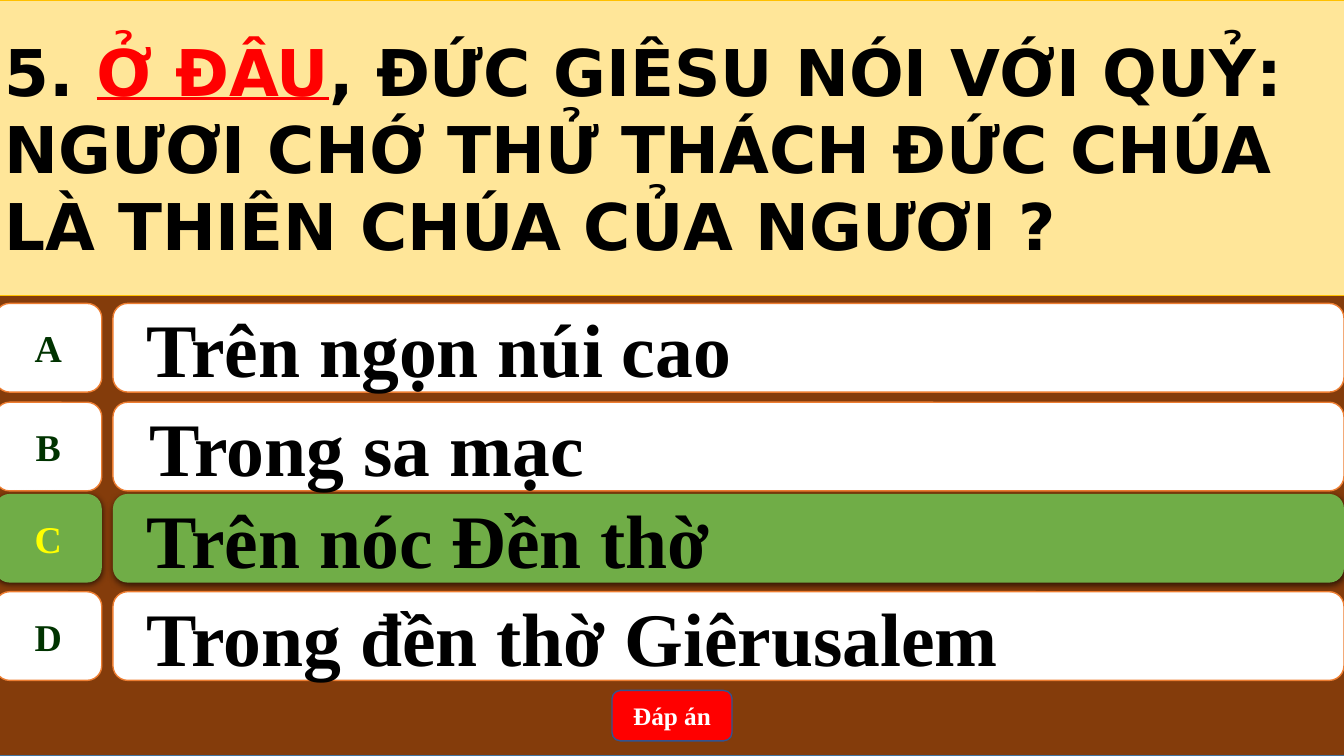
from lxml.etree import SubElement
from pptx import Presentation
from pptx.dml.color import RGBColor
from pptx.enum.shapes import MSO_SHAPE
from pptx.enum.text import MSO_ANCHOR, PP_ALIGN
from pptx.oxml.ns import qn
from pptx.util import Inches, Pt

BROWN = RGBColor(0x84, 0x3C, 0x0B)
BLUE = RGBColor(0x43, 0x73, 0x9E)
BUTTON_BLUE = RGBColor(0x32, 0x54, 0x91)
CREAM = RGBColor(0xFF, 0xE6, 0x99)
GOLD = RGBColor(0xFF, 0xC0, 0x00)
ORANGE = RGBColor(0xED, 0x7D, 0x31)
GREEN = RGBColor(0x70, 0xAD, 0x47)
DARK_GREEN = RGBColor(0x00, 0x33, 0x00)
YELLOW = RGBColor(0xFF, 0xFF, 0x00)
RED = RGBColor(0xFF, 0x00, 0x00)
WHITE = RGBColor(0xFF, 0xFF, 0xFF)
BLACK = RGBColor(0x00, 0x00, 0x00)

SERIF = "Times New Roman"
SANS = "DejaVu Sans"
LEFT = -0.05
FULL_WIDTH = 13.39
ANSWERS = [
    ("A", "Trên ngọn núi cao", 3.01, 0.29),
    ("B", "Trong sa mạc", 3.99, 0.32),
    ("C", "Trên nóc Đền thờ", 4.9, 0.29),
    ("D", "Trong đền thờ Giêrusalem", 5.87, 0.29),
]
CORRECT = "C"
QUESTION = [
    [("5. ", BLACK, False), ("Ở ĐÂU", RED, True),
     (", ĐỨC GIÊSU NÓI VỚI QUỶ:", BLACK, False)],
    [("NGƯƠI CHỚ THỬ THÁCH ĐỨC CHÚA", BLACK, False)],
    [("LÀ THIÊN CHÚA CỦA NGƯƠI ?", BLACK, False)],
]


def add_box(page, kind, place, fill, line=None, line_width=1):
    """Add a filled shape with an optional outline and no shadow."""
    box = page.shapes.add_shape(kind, *(Inches(length) for length in place))
    box.shadow.inherit = False
    box.fill.solid()
    box.fill.fore_color.rgb = fill
    if line is None:
        box.line.fill.background()
    else:
        box.line.color.rgb = line
        box.line.width = Pt(line_width)
    box.text_frame.vertical_anchor = MSO_ANCHOR.MIDDLE
    return box


def style_paragraph(para, align, font_name, size, color):
    """Set the alignment and the bold font of a paragraph."""
    para.alignment = align
    para.font.name = font_name
    para.font.size = Pt(size)
    para.font.bold = True
    para.font.color.rgb = color


def write_label(box, text, align, size, color):
    """Write one line of serif text into a shape."""
    para = box.text_frame.paragraphs[0]
    para.text = text
    style_paragraph(para, align, SERIF, size, color)


def add_shadow(box):
    """Give a shape a soft shadow below it."""
    effects = box._element.spPr.find(qn("a:effectLst"))
    shadow = SubElement(effects, qn("a:outerShdw"), blurRad=str(Pt(4.5)),
                        dist=str(Pt(1.5)), dir="5400000", rotWithShape="0")
    color = SubElement(shadow, qn("a:srgbClr"), val=str(BLACK))
    SubElement(color, qn("a:alpha"), val="63000")


def add_answer(page, letter, text, top, inset):
    """Add a letter tag and its answer bar, highlighted when correct."""
    correct = letter == CORRECT
    fill, line = (GREEN, None) if correct else (WHITE, ORANGE)
    bar = add_box(page, MSO_SHAPE.ROUNDED_RECTANGLE, (1.12, top, 12.21, 0.88), fill, line)
    bar.text_frame.margin_left = Inches(inset)
    bar.text_frame.word_wrap = True
    write_label(bar, text, PP_ALIGN.LEFT, 54, BLACK)
    tag = add_box(page, MSO_SHAPE.FLOWCHART_ALTERNATE_PROCESS,
                  (LEFT, top, 1.06, 0.88), fill, line)
    tag.text_frame.word_wrap = False
    write_label(tag, letter, PP_ALIGN.CENTER, 27, YELLOW if correct else DARK_GREEN)
    if correct:
        add_shadow(bar)
        add_shadow(tag)


def add_question(page):
    """Add the question panel with its highlighted words."""
    panel = add_box(page, MSO_SHAPE.RECTANGLE, (LEFT, 0, FULL_WIDTH, 2.93), CREAM, GOLD, 0.5)
    frame = panel.text_frame
    frame.word_wrap = True
    for index, pieces in enumerate(QUESTION):
        para = frame.add_paragraph() if index else frame.paragraphs[0]
        style_paragraph(para, PP_ALIGN.JUSTIFY, SANS, 46, BLACK)
        for text, color, underline in pieces:
            span = para.add_run()
            span.text = text
            span.font.color.rgb = color
            span.font.underline = underline


def main():
    """Build the quiz slide and save it."""
    deck = Presentation()
    deck.slide_width = Inches(13.33)
    deck.slide_height = Inches(7.5)
    page = deck.slides.add_slide(deck.slide_layouts[6])
    add_box(page, MSO_SHAPE.RECTANGLE, (LEFT, 0, FULL_WIDTH, 7.5), BROWN, BLUE)
    for answer in ANSWERS:
        add_answer(page, *answer)
    button = add_box(page, MSO_SHAPE.ROUNDED_RECTANGLE, (6.07, 6.85, 1.19, 0.5),
                     RED, BUTTON_BLUE)
    write_label(button, "Đáp án", PP_ALIGN.CENTER, 18, WHITE)
    add_question(page)
    deck.save("out.pptx")


if __name__ == "__main__":
    main()
